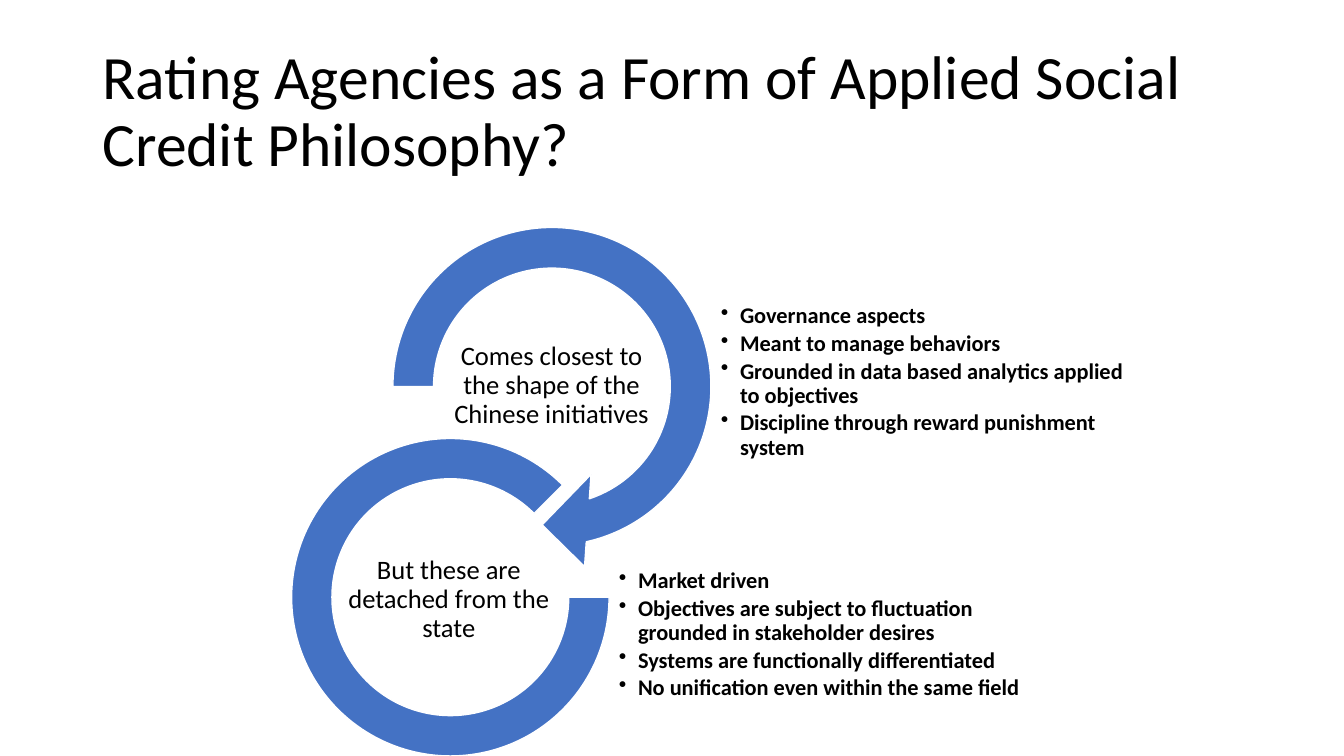
from lxml import etree
from pptx import Presentation
from pptx.dml.color import RGBColor
from pptx.enum.shapes import MSO_SHAPE
from pptx.enum.text import MSO_ANCHOR, MSO_AUTO_SIZE, PP_ALIGN
from pptx.oxml.ns import qn
from pptx.util import Cm, Pt

MIDDLE = MSO_ANCHOR.MIDDLE
LEFT, CENTER = PP_ALIGN.LEFT, PP_ALIGN.CENTER
FONT = "Calibri"
BLACK, WHITE, BLUE = "000000", "FFFFFF", "4472C4"
HANGING = Cm(0.48)


def color(hex_string):
    return RGBColor.from_string(hex_string)


def fill_text(shape, lines, size, align, bold=False, bullets=False):
    frame = shape.text_frame
    frame.word_wrap = True
    frame.auto_size = MSO_AUTO_SIZE.NONE
    frame.vertical_anchor = MIDDLE
    for index, line in enumerate(lines):
        paragraph = frame.paragraphs[0] if index == 0 else frame.add_paragraph()
        paragraph.text = line
        paragraph.alignment = align
        paragraph.line_spacing = 0.9
        if index:
            paragraph.space_before = Pt(2.5)
        if bullets:
            properties = paragraph._p.get_or_add_pPr()
            properties.set("marL", str(HANGING))
            properties.set("indent", str(-HANGING))
            etree.SubElement(properties, qn("a:buChar")).set("char", "•")
        paragraph.font.name = FONT
        paragraph.font.size = Pt(size)
        paragraph.font.bold = bold
        paragraph.font.color.rgb = color(BLACK)


presentation = Presentation()
presentation.slide_width, presentation.slide_height = Cm(33.87), Cm(19.05)
slide = presentation.slides.add_slide(presentation.slide_layouts[5])

# Title
title = slide.shapes.title
title.left, title.top, title.width, title.height = Cm(2.33), Cm(1.01), Cm(29.21), Cm(3.68)
fill_text(title, ["Rating Agencies as a Form of Applied Social Credit Philosophy?"], 44, LEFT)

# Each stage: ring (preset, left, top, diameter, adjustments), label, bullet list
stages = [
    (
        (MSO_SHAPE.CIRCULAR_ARROW, 9.25, 5.08, 9.32, [0.11, 11.423, 45, 108, 0.125]),
        (11.3, 8.43, "Comes closest to the shape of the Chinese initiatives"),
        (18.14, 6.99, 10.39, 5.28, [
            "Governance aspects",
            "Meant to manage behaviors",
            "Grounded in data based analytics applied to objectives",
            "Discipline through reward punishment system",
        ]),
    ),
    (
        (MSO_SHAPE.BLOCK_ARC, 7.35, 11.05, 8, [0, 189, 0.127]),
        (8.71, 13.82, "But these are detached from the state"),
        (15.57, 13.59, 11.3, 4.83, [
            "Market driven",
            "Objectives are subject to fluctuation grounded in stakeholder desires",
            "Systems are functionally differentiated",
            "No unification even within the same field",
        ]),
    ),
]

for ring_data, label_data, list_data in stages:
    # Ring
    preset, left, top, diameter, adjustments = ring_data
    ring = slide.shapes.add_shape(preset, Cm(left), Cm(top), Cm(diameter), Cm(diameter))
    for index, value in enumerate(adjustments):
        ring.adjustments[index] = value
    ring.shadow.inherit = False
    ring.fill.solid()
    ring.fill.fore_color.rgb = color(BLUE)
    ring.line.color.rgb = color(WHITE)
    ring.line.width = Pt(1)

    # Bullet list beside the ring and label inside it
    left, top, width, height, points = list_data
    bullet_list = slide.shapes.add_textbox(Cm(left), Cm(top), Cm(width), Cm(height))
    left, top, caption = label_data
    label = slide.shapes.add_textbox(Cm(left), Cm(top), Cm(5.2), Cm(2.6))
    for box in (bullet_list, label):
        frame = box.text_frame
        frame.margin_left = frame.margin_right = Cm(0.03)
        frame.margin_top = frame.margin_bottom = Cm(0.03)
    fill_text(bullet_list, points, 16, LEFT, bold=True, bullets=True)
    fill_text(label, [caption], 19, CENTER)

presentation.save("out.pptx")
